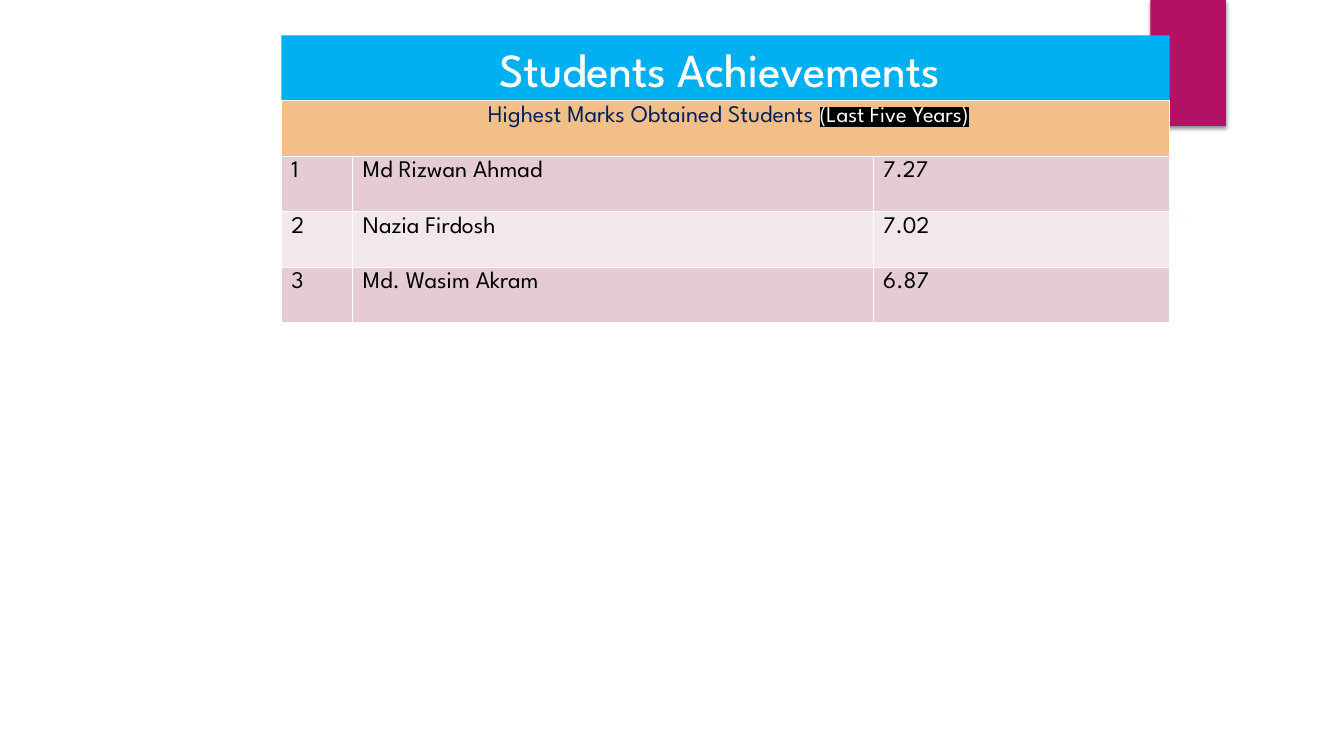
"""Build the Students Achievements slide with its table of highest marks."""
from lxml import etree
from pptx import Presentation
from pptx import util as u
from pptx.dml.color import RGBColor
from pptx.enum import shapes, text
from pptx.oxml import parse_xml
from pptx.oxml.ns import nsdecls, qn

COLORS = {"white": "FFFFFF", "black": "000000", "magenta": "B31166",
          "blue": "00B0F0", "navy": "002060", "peach": "F2BF89",
          "rose": "E5CCD3", "pale": "F2E7EA", "violet": "9B6BF2"}
FONT = "League Spartan"
W, H = 13.33, 7.5
LEFT, TOP, TITLE_H, ROW_H = 2.79, 0.35, 0.65, 0.55
COLS = [0.71, 5.16, 2.94]
STUDENTS = [("1", "Md Rizwan Ahmad", "7.27"),
            ("2", "Nazia Firdosh", "7.02"),
            ("3", "Md. Wasim Akram", "6.87")]
GLOWS = [(0, 2.92, 4.58, [(0, 11), (36, 10), (75, 0)]),
         (0, 3.17, 2.58, [(0, 8), (36, 8), (72, 0)]),
         (9.41, 6.42, 1.08, [(0, 14), (36, 7), (66, 0)]),
         (9.41, 1.83, 3.08, [(0, 7), (36, 6), (69, 0)]),
         (8.75, 0.01, 1.75, [(0, 14), (36, 7), (73, 0)])]
SWEEP = [(9.32, 2.2), (10.99, 2.36), (12.88, 2.45), (12.9, 1.96), (12.17, 2.06),
         (11.34, 2.13), (10.53, 2.15), (9.29, 2.12)]
SHEET = [(0.5, 2.04), (0.5, 7), (12.84, 7), (12.84, 2.04), (11.72, 2.2), (10.6, 2.32),
         (9.49, 2.41), (8.4, 2.46), (7.08, 2.48), (5.83, 2.46), (4.44, 2.41),
         (3.21, 2.33), (2.16, 2.24), (1.35, 2.15)]
FRAME = [[(0, 0), (0, H), (W, H), (W, 0)],
         [(12.81, 6.98), (0.52, 6.98), (0.52, 0.52), (12.81, 0.52)]]


def fill(obj, color):
    obj.fill.solid()
    obj.fill.fore_color.rgb = RGBColor.from_string(COLORS[color])


def add_run(p, words, size, color):
    r = p.add_run()
    r.text = words
    for name, value in {"size": u.Pt(size), "name": FONT}.items():
        setattr(r.font, name, value)
    fill(r.font, color)
    return r.font.fill._xPr


prs = Presentation()
prs.slide_width, prs.slide_height = u.Inches(W), u.Inches(H)
s = prs.slides.add_slide(prs.slide_layouts[6])

for x, y, size, stops in GLOWS:
    sp = s.shapes.add_shape(shapes.MSO_SHAPE.OVAL, u.Inches(x), u.Inches(y),
                            u.Inches(size), u.Inches(size))
    sp.shadow.inherit = False
    sp.line.fill.background()
    stop_xml = "".join(
        f'<a:gs pos="{pos * 1000}"><a:srgbClr val="{COLORS["violet"]}">'
        f'<a:alpha val="{alpha * 1000}"/></a:srgbClr></a:gs>' for pos, alpha in stops)
    sp._element.spPr.find(qn("a:prstGeom")).addnext(parse_xml(
        f'<a:gradFill {nsdecls("a")}><a:gsLst>{stop_xml}</a:gsLst><a:path path="circle">'
        '<a:fillToRect l="50000" t="50000" r="50000" b="50000"/></a:path></a:gradFill>'))

for contours, angle, opacity in [([SWEEP], 350.2, 20), ([SHEET], 0, 100), (FRAME, 0, 100)]:
    outlines = [[(u.Inches(x), u.Inches(y)) for x, y in c] for c in contours]
    fb = s.shapes.build_freeform(*outlines[0][0])
    fb.add_line_segments(outlines[0][1:])
    for outline in outlines[1:]:
        fb.move_to(*outline[0])
        fb.add_line_segments(outline[1:])
    sp = fb.convert_to_shape()
    sp.shadow.inherit = False
    sp.line.fill.background()
    sp.rotation = angle
    fill(sp, "white")
    if opacity < 100:
        color = sp._element.spPr.find(qn("a:solidFill"))[0]
        etree.SubElement(color, qn("a:alpha")).set("val", str(opacity * 1000))

sp = s.shapes.add_shape(shapes.MSO_SHAPE.RECTANGLE, u.Inches(11.41), 0,
                        u.Inches(0.75), u.Inches(1.25))
fill(sp, "magenta")
sp.line.fill.background()
sp._element.spPr.append(parse_xml(
    f'<a:effectLst {nsdecls("a")}><a:outerShdw blurRad="{u.Pt(3)}" dist="{u.Pt(2)}" '
    f'dir="5400000" rotWithShape="0"><a:srgbClr val="{COLORS["black"]}">'
    '<a:alpha val="45000"/></a:srgbClr></a:outerShdw></a:effectLst>'))

title = s.shapes.add_textbox(u.Inches(LEFT), u.Inches(TOP),
                             u.Inches(sum(COLS)), u.Inches(TITLE_H))
fill(title, "blue")
tf = title.text_frame
for name, value in {"word_wrap": True, "vertical_anchor": text.MSO_ANCHOR.MIDDLE}.items():
    setattr(tf, name, value)
p = tf.paragraphs[0]
p.alignment = text.PP_ALIGN.CENTER
rpr = add_run(p, "Students Achievements ", 33.2, "white")
rpr.insert(0, parse_xml(
    f'<a:ln {nsdecls("a")} w="{u.Pt(1.45)}"><a:solidFill>'
    f'<a:srgbClr val="{COLORS["white"]}"/></a:solidFill></a:ln>'))

table = s.shapes.add_table(len(STUDENTS) + 1, len(COLS), u.Inches(LEFT),
                           u.Inches(TOP + TITLE_H), u.Inches(sum(COLS)),
                           u.Inches(ROW_H * (len(STUDENTS) + 1))).table
for col, width in zip(table.columns, COLS):
    col.width = u.Inches(width)
for i, row in enumerate(table.rows):
    row.height = u.Inches(ROW_H)
    for cell in row.cells:
        fill(cell, "peach" if i == 0 else "rose" if i % 2 else "pale")
        for j, side in enumerate("LRTB"):
            cell._tc.tcPr.insert(j, parse_xml(
                f'<a:ln{side} {nsdecls("a")} w="{u.Pt(1)}"><a:solidFill>'
                f'<a:srgbClr val="{COLORS["white"]}"/></a:solidFill></a:ln{side}>'))

heading = table.cell(0, 0)
heading.merge(table.cell(0, len(COLS) - 1))
p = heading.text_frame.paragraphs[0]
p.alignment = text.PP_ALIGN.CENTER
add_run(p, " Highest Marks Obtained Students ", 17, "navy")
rpr = add_run(p, "(Last Five Years)", 16, "white")
highlight = etree.Element(qn("a:highlight"))
etree.SubElement(highlight, qn("a:srgbClr")).set("val", COLORS["black"])
rpr.find(qn("a:solidFill")).addnext(highlight)

for i, student in enumerate(STUDENTS, 1):
    for j, words in enumerate(student):
        add_run(table.cell(i, j).text_frame.paragraphs[0], words, 17, "black")

prs.save("out.pptx")
